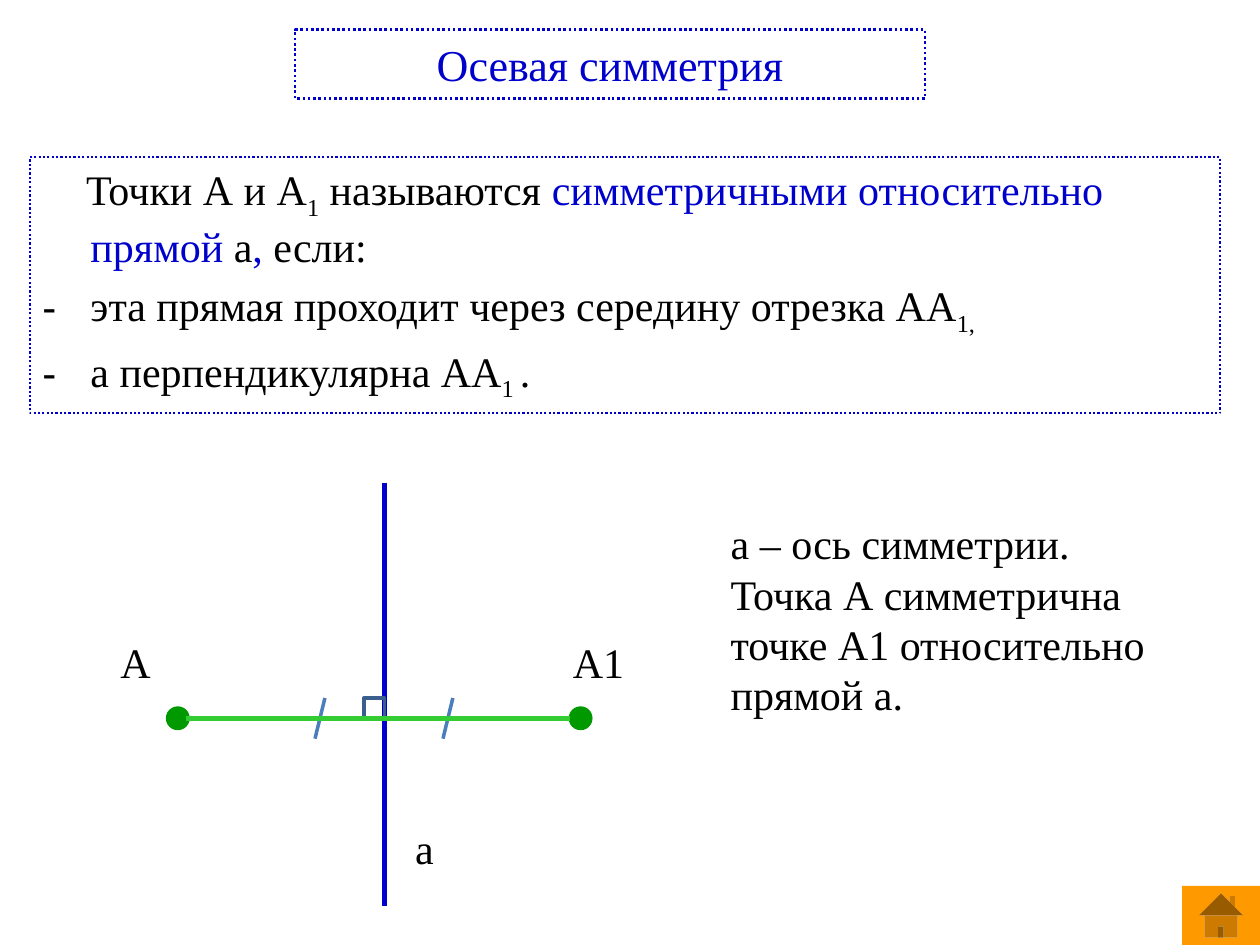
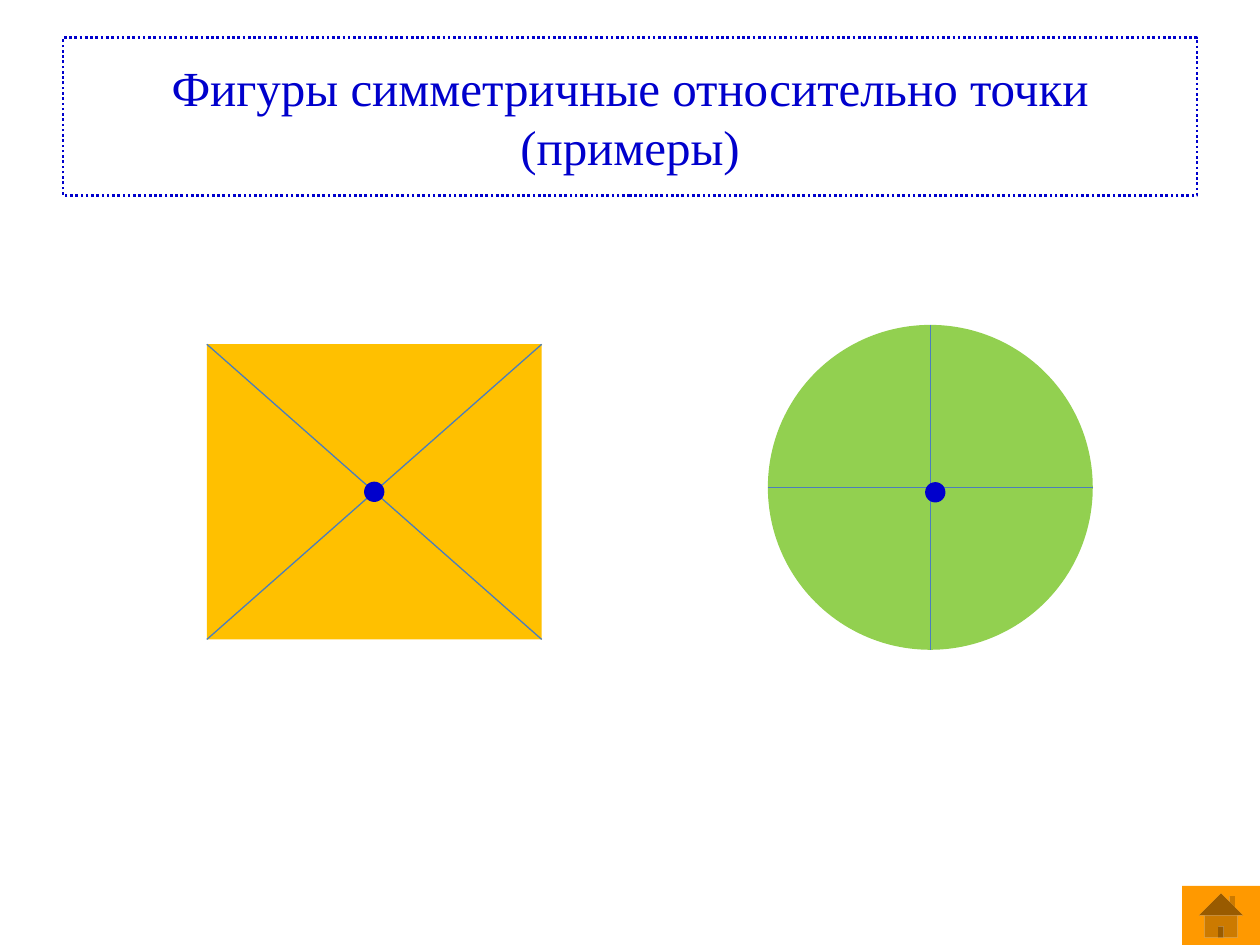
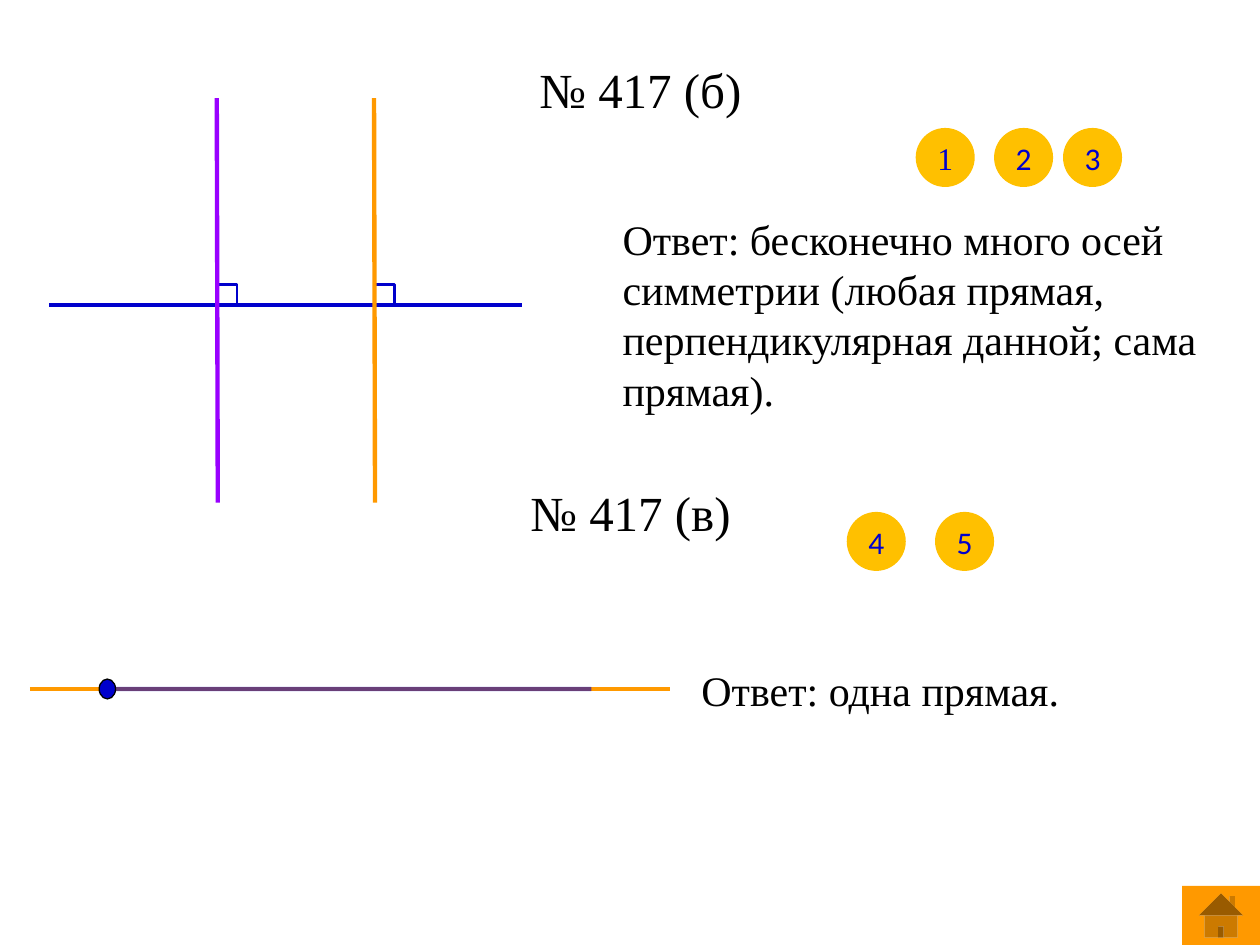
from pptx import Presentation
from pptx.dml.color import RGBColor
from pptx.enum.dml import MSO_LINE
from pptx.enum.shapes import MSO_CONNECTOR, MSO_SHAPE
from pptx.enum.text import MSO_ANCHOR, MSO_AUTO_SIZE, PP_ALIGN
from pptx.oxml.ns import qn
from pptx.util import Cm, Pt
from lxml import etree

RECT, OVAL = MSO_SHAPE.RECTANGLE, MSO_SHAPE.OVAL
HOME = MSO_SHAPE.ACTION_BUTTON_HOME
STRAIGHT = MSO_CONNECTOR.STRAIGHT
DOTTED = MSO_LINE.ROUND_DOT
LEFT, CENTER = PP_ALIGN.LEFT, PP_ALIGN.CENTER
TOP, MIDDLE = MSO_ANCHOR.TOP, MSO_ANCHOR.MIDDLE
NO_FIT = MSO_AUTO_SIZE.NONE

BLACK = RGBColor(0x00, 0x00, 0x00)
BLUE = RGBColor(0x00, 0x00, 0xCC)
STEEL = RGBColor(0x4B, 0x7E, 0xBC)
DARK_STEEL = RGBColor(0x3A, 0x5F, 0x8C)
GREEN = RGBColor(0x00, 0x99, 0x00)
BRIGHT_GREEN = RGBColor(0x33, 0xCC, 0x33)
LIME = RGBColor(0x92, 0xD0, 0x50)
AMBER = RGBColor(0xFF, 0xC0, 0x00)
ORANGE = RGBColor(0xFF, 0x99, 0x00)
VIOLET = RGBColor(0x99, 0x00, 0xFF)

SERIF, SANS = "Times New Roman", "Calibri"
TITLE_ONLY, TITLE_AND_BODY = 5, 1
MARK = 0.41


def place(item, box):
    item.left, item.top, item.width, item.height = map(Cm, box)


def add_span(para, text, size=24, color=BLACK, font=SERIF, baseline=0):
    span = para.add_run()
    span.text = text
    span.font.size = Pt(size)
    span.font.name = font
    span.font.color.rgb = color
    if baseline:
        span._r.get_or_add_rPr().set("baseline", str(baseline * 1000))


def set_frame(item, anchor=TOP):
    frame = item.text_frame
    frame.word_wrap = True
    frame.auto_size = NO_FIT
    frame.vertical_anchor = anchor
    return frame


def add_text(page, box, *lines, size=24, align=LEFT, anchor=TOP):
    frame = set_frame(page.shapes.add_textbox(*map(Cm, box)), anchor)
    for number, line in enumerate(lines):
        para = frame.add_paragraph() if number else frame.paragraphs[0]
        para.alignment = align
        add_span(para, line, size)


def add_figure(page, kind, box, fill=None, line=None, width=2):
    figure = page.shapes.add_shape(kind, *map(Cm, box))
    figure.shadow.inherit = False
    if fill is None:
        figure.fill.background()
    else:
        figure.fill.solid()
        figure.fill.fore_color.rgb = fill
    if line is None:
        figure.line.fill.background()
    else:
        figure.line.color.rgb = line
        figure.line.width = Pt(width)
    return figure


def add_line(page, start, end, color, width, opacity=100):
    line = page.shapes.add_connector(STRAIGHT, *map(Cm, start + end))
    line.line.color.rgb = color
    line.line.width = Pt(width)
    properties = line._element.spPr
    etree.SubElement(properties, qn("a:effectLst"))
    if opacity < 100:
        tint = properties.find(".//" + qn("a:srgbClr"))
        etree.SubElement(tint, qn("a:alpha")).set("val", str(opacity * 1000))


def add_dotted_border(item, width):
    item.line.color.rgb = BLUE
    item.line.width = Pt(width)
    item.line.dash_style = DOTTED


def add_page(deck, layout, title, box, size=28, color=BLUE, framed=True):
    page = deck.slides.add_slide(deck.slide_layouts[layout])
    heading = page.shapes.title
    place(heading, box)
    para = set_frame(heading, MIDDLE).paragraphs[0]
    para.alignment = CENTER
    add_span(para, title, size, color)
    if framed:
        add_dotted_border(heading, 1.5)
    add_figure(page, HOME, (23.83, 17.86, 1.57, 1.19), ORANGE)
    return page


def format_item(para, indent, bullet=None):
    para.space_before = Pt(4.8)
    properties = para._p.get_or_add_pPr()
    properties.set("marL", str(Cm(0.97)))
    properties.set("indent", str(Cm(indent)))
    if bullet:
        etree.SubElement(properties, qn("a:buChar")).set("char", bullet)
    else:
        etree.SubElement(properties, qn("a:buNone"))


def fill_definition(page, box):
    body = page.placeholders[1]
    place(body, box)
    add_dotted_border(body, 1.25)
    frame = set_frame(body)
    intro = frame.paragraphs[0]
    format_item(intro, -0.09)
    add_span(intro, "Точки А и А")
    add_span(intro, "1", baseline=-25)
    add_span(intro, " называются ")
    add_span(intro, "симметричными относительно прямой ", color=BLUE)
    add_span(intro, "а")
    add_span(intro, ", ", color=BLUE)
    add_span(intro, "если:")
    conditions = [
        ("эта прямая проходит через середину отрезка АА", "1,", ""),
        ("а перпендикулярна АА", "1 ", "."),
    ]
    for text, index, ending in conditions:
        para = frame.add_paragraph()
        format_item(para, -0.97, "-")
        add_span(para, text)
        add_span(para, index, baseline=-25)
        if ending:
            add_span(para, ending)


def draw_mirrored_points(page, box):
    left, top, width, height = box
    axis, base = left + 5.57, top + 4.75
    mark_top = base - MARK
    add_line(page, (axis, top), (axis, top + height), BLUE, 3)
    add_figure(page, RECT, (axis - MARK, mark_top, MARK, MARK), line=DARK_STEEL)
    labels = [("А", 0, 2.97, 1.14), ("А1", 9.12, 2.97, 1.78), ("а", 5.94, 6.73, 0.58)]
    for label, across, down, span in labels:
        add_text(page, (left + across, top + down, span, 1.3), label)
    for across in (1.2, 9.32):
        dot = (left + across, base - MARK / 2, MARK, MARK)
        add_figure(page, OVAL, dot, GREEN, GREEN)
    for across in (4.17, 6.75):
        tick = left + across
        add_line(page, (tick + 0.2, mark_top), (tick, base + MARK), STEEL, 2)
    for start, end in ((5.36, 9.32), (1.57, 5.57)):
        add_line(page, (left + start, base), (left + end, base), BRIGHT_GREEN, 3)


def draw_centred_figure(page, kind, box, fill, crossing, offset):
    left, top, width, height = box
    add_figure(page, kind, box, fill)
    for x1, y1, x2, y2 in crossing:
        start = (left + x1 * width, top + y1 * height)
        end = (left + x2 * width, top + y2 * height)
        add_line(page, start, end, STEEL, 0.75)
    shift = offset - MARK / 2
    centre = (left + width / 2 + shift, top + height / 2 + shift, MARK, MARK)
    add_figure(page, OVAL, centre, BLUE)


def draw_perpendiculars(page, box):
    left, top, width, height = box
    base = top + 4.17
    add_line(page, (left, base), (left + width, base), BLUE, 2.5)
    for across, color in ((3.38, VIOLET), (6.55, ORANGE)):
        foot = left + across
        add_figure(page, RECT, (foot, base - MARK, MARK, MARK), line=BLUE, width=1.5)
        add_line(page, (foot + 0.02, top + height), (foot, top), color, 2.5)


def draw_ray(page, box):
    left, top, width, height = box
    base = top + height / 2
    origin = left + 1.4
    add_line(page, (left, base), (left + width, base), ORANGE, 2.5)
    add_line(page, (origin, base), (left + 11.32, base), BLUE, 2.5, 59)
    add_figure(page, OVAL, (origin, top, 0.33, height), BLUE, BLACK, 0)


def add_step(page, number, left, top, font=SANS):
    step = add_figure(page, OVAL, (left, top, 1.19, 1.19), AMBER)
    frame = set_frame(step, MIDDLE)
    frame.margin_left = frame.margin_right = 0
    frame.margin_top = frame.margin_bottom = 0
    para = frame.paragraphs[0]
    para.alignment = CENTER
    add_span(para, number, 18, BLUE, font)


def build_axis_page(deck):
    page = add_page(deck, TITLE_AND_BODY, "Осевая симметрия",
                    (5.95, 0.6, 12.7, 1.39), 25.2)
    fill_definition(page, (0.6, 3.17, 24, 5.16))
    draw_mirrored_points(page, (2.18, 9.73, 10.9, 8.53))
    add_text(page, (14.48, 10.31, 9.73, 4.37), "a – ось симметрии.",
             "Точка А симметрична точке А1 относительно прямой а.")


def build_examples_page(deck):
    page = add_page(deck, TITLE_ONLY,
                    "Фигуры симметричные относительно точки (примеры)",
                    (1.27, 0.76, 22.86, 3.18))
    diagonals = [(0, 0, 1, 1), (1, 0, 0, 1)]
    diameters = [(0.5, 0, 0.5, 1), (0, 0.5, 1, 0.5)]
    draw_centred_figure(page, RECT, (4.17, 6.94, 6.75, 5.95), AMBER, diagonals, 0)
    draw_centred_figure(page, OVAL, (15.48, 6.55, 6.55, 6.55), LIME, diameters, 0.1)


def build_exercise_page(deck):
    page = add_page(deck, TITLE_ONLY, "№ 417 (б)", (10.52, 0.6, 4.78, 2.38),
                    color=BLACK, framed=False)
    draw_perpendiculars(page, (0.99, 1.98, 9.53, 8.15))
    add_text(page, (12.3, 4.17, 12.7, 4.37),
             "Ответ: бесконечно много осей симметрии (любая прямая, "
             "перпендикулярная данной; сама прямая).")
    add_text(page, (10.32, 9.13, 4.78, 2.38), "№ 417 (в)",
             size=28, align=CENTER, anchor=MIDDLE)
    draw_ray(page, (0.6, 13.69, 12.9, 0.4))
    add_text(page, (13.89, 13.28, 7.75, 1.3), "Ответ: одна прямая.")
    add_step(page, "1", 18.46, 2.58, SERIF)
    steps = [("2", 20.04, 2.58), ("3", 21.43, 2.58),
             ("4", 17.07, 10.32), ("5", 18.85, 10.32)]
    for number, left, top in steps:
        add_step(page, number, left, top)


def main():
    deck = Presentation()
    deck.slide_width, deck.slide_height = Cm(25.4), Cm(19.05)
    build_axis_page(deck)
    build_examples_page(deck)
    build_exercise_page(deck)
    deck.save("out.pptx")


if __name__ == "__main__":
    main()
